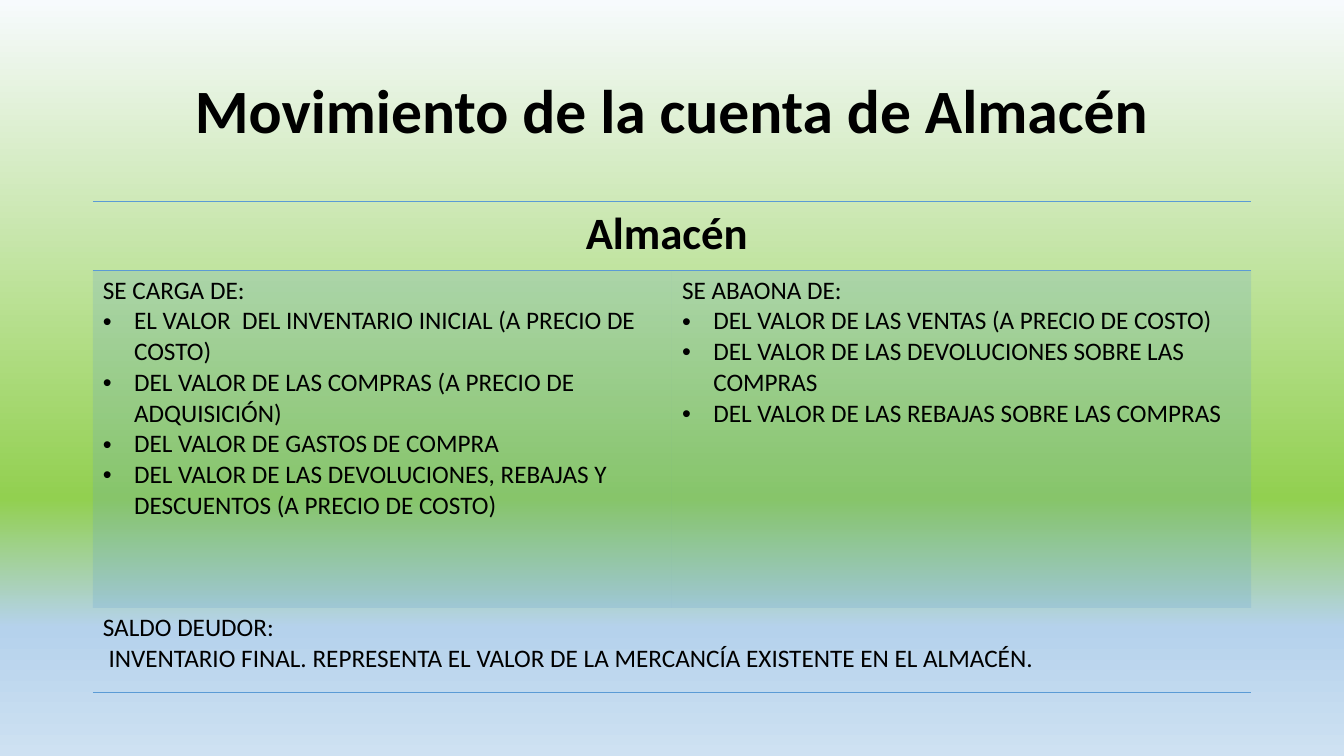
from lxml import etree
from pptx import Presentation
from pptx.dml.color import RGBColor
from pptx.enum.text import MSO_ANCHOR, PP_ALIGN
from pptx.oxml import parse_xml
from pptx.oxml.ns import nsdecls, qn
from pptx.util import Emu, Inches, Pt

CENTER, LEFT, MIDDLE = PP_ALIGN.CENTER, PP_ALIGN.LEFT, MSO_ANCHOR.MIDDLE

# Content
TITLE = "Movimiento de la cuenta de Almacén"
ACCOUNT = "Almacén "
ENTRIES = [
    ("SE CARGA DE:", [
        "EL VALOR  DEL INVENTARIO INICIAL (A PRECIO DE COSTO)",
        "DEL VALOR DE LAS COMPRAS (A PRECIO DE ADQUISICIÓN)",
        "DEL VALOR DE GASTOS DE COMPRA",
        "DEL VALOR DE LAS DEVOLUCIONES, REBAJAS Y DESCUENTOS (A PRECIO DE COSTO)",
    ]),
    ("SE ABAONA DE:", [
        "DEL VALOR DE LAS VENTAS (A PRECIO DE COSTO)",
        "DEL VALOR DE LAS DEVOLUCIONES SOBRE LAS COMPRAS",
        "DEL VALOR DE LAS REBAJAS SOBRE LAS COMPRAS",
    ]),
]
BALANCE = [
    "SALDO DEUDOR:",
    " INVENTARIO FINAL. REPRESENTA EL VALOR DE LA MERCANCÍA EXISTENTE EN EL ALMACÉN.",
]

# Look
FONT, BLACK, BLUE = "Calibri", "000000", "5B9BD5"
TITLE_SIZE, ACCOUNT_SIZE, BODY_SIZE = 44, 32, 18
BACKDROP = [(0, "F7FAFD"), (66, "92D050"), (83, "B5D2EC"), (100, "CEE1F2")]
BAND_OPACITY = 20
BULLET_INDENT = Inches(0.31)
NO_STYLE = "{2D5ABB26-0587-4C30-8999-92F81FD0307C}"

# Layout
SLIDE_W, SLIDE_H = Inches(13.33), Inches(7.5)
MARGIN = Inches(0.92)
CONTENT_W = SLIDE_W - 2 * MARGIN
TITLE_TOP, TITLE_H = Inches(0.4), Inches(1.45)
TABLE_TOP = Inches(2)
ROW_HEIGHTS = [Inches(h) for h in (0.68, 3.35, 0.84)]


def color(hex_code):
    return RGBColor.from_string(hex_code)


def add_line(frame, text, size=BODY_SIZE, bold=False, align=LEFT, bullet=False):
    first = frame.paragraphs[0]
    paragraph = frame.add_paragraph() if first.runs else first
    paragraph.alignment = align
    run = paragraph.add_run()
    run.text = text
    run.font.name, run.font.size, run.font.bold = FONT, Pt(size), bold
    run.font.color.rgb = color(BLACK)
    if bullet:
        props = paragraph._p.get_or_add_pPr()
        props.set("marL", str(BULLET_INDENT))
        props.set("indent", str(-BULLET_INDENT))
        etree.SubElement(props, qn("a:buFont")).set("typeface", "Arial")
        etree.SubElement(props, qn("a:buChar")).set("char", "•")
    return paragraph


def add_borders(cell, sides):
    for place, side in enumerate(sides):
        cell._tc.get_or_add_tcPr().insert(place, parse_xml(
            f'<a:ln{side} {nsdecls("a")} w="{Pt(1)}"><a:solidFill>'
            f'<a:srgbClr val="{BLUE}"/></a:solidFill></a:ln{side}>'))


prs = Presentation()
prs.slide_width, prs.slide_height = SLIDE_W, SLIDE_H
slide = prs.slides.add_slide(prs.slide_layouts[6])

# Background gradient, top to bottom
backdrop = slide.background.fill
backdrop.gradient()
stops = "".join(f'<a:gs pos="{share * 1000}"><a:srgbClr val="{tone}"/></a:gs>'
                for share, tone in BACKDROP)
gradient = slide.background._cSld.find(".//" + qn("a:gradFill"))
gradient.replace(gradient.find(qn("a:gsLst")),
                 parse_xml(f'<a:gsLst {nsdecls("a")}>{stops}</a:gsLst>'))
backdrop.gradient_angle = 270

# Title
heading = slide.shapes.add_textbox(MARGIN, TITLE_TOP, CONTENT_W, TITLE_H).text_frame
heading.word_wrap = True
heading.vertical_anchor = MIDDLE
add_line(heading, TITLE, TITLE_SIZE, True, CENTER).line_spacing = 0.9

# Account table
account = slide.shapes.add_table(len(ROW_HEIGHTS), len(ENTRIES), MARGIN, TABLE_TOP,
                                 CONTENT_W, Emu(sum(ROW_HEIGHTS))).table
account.first_row = account.horz_banding = False
account._tbl.tblPr.find(qn("a:tableStyleId")).text = NO_STYLE
for row, height in zip(account.rows, ROW_HEIGHTS):
    row.height = height
for row in (0, 2):
    account.cell(row, 0).merge(account.cell(row, 1))
for cell in account.iter_cells():
    cell.fill.background()

# Account name
add_line(account.cell(0, 0).text_frame, ACCOUNT, ACCOUNT_SIZE, True, CENTER)

# Charges and credits
for column, (label, items) in enumerate(ENTRIES):
    cell = account.cell(1, column)
    add_line(cell.text_frame, label)
    for item in items:
        add_line(cell.text_frame, item, bullet=True)
    cell.fill.solid()
    cell.fill.fore_color.rgb = color(BLUE)
    tint = cell._tc.tcPr.find(".//" + qn("a:srgbClr"))
    etree.SubElement(tint, qn("a:alpha")).set("val", str(BAND_OPACITY * 1000))

# Balance
for line in BALANCE:
    add_line(account.cell(2, 0).text_frame, line)

# Rules above and below
for column in range(len(ENTRIES)):
    add_borders(account.cell(0, column), "TB")
    add_borders(account.cell(2, column), "B")

prs.save("out.pptx")
